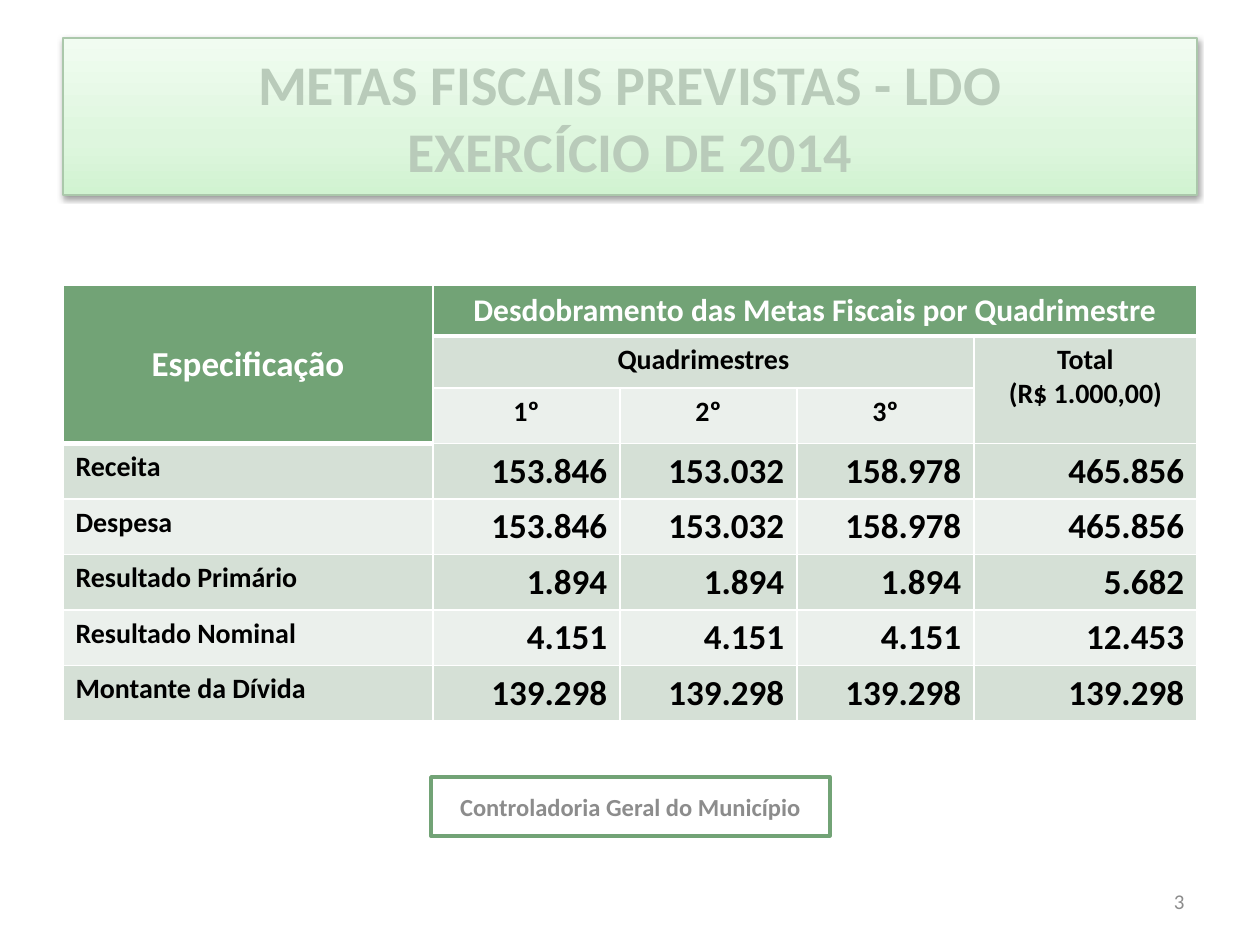
from lxml.etree import SubElement
from pptx import Presentation
from pptx.dml.color import RGBColor
from pptx.enum.shapes import MSO_SHAPE
from pptx.enum.text import MSO_ANCHOR, PP_ALIGN
from pptx.oxml import parse_xml
from pptx.oxml.ns import nsdecls, qn
from pptx.util import Pt

TITLE = ["METAS FISCAIS PREVISTAS - LDO", "EXERCÍCIO DE 2014"]
HEADINGS = [
    (0, 0, 2, 0, ["Especificação"], 20),
    (0, 1, 0, 4, ["Desdobramento das Metas Fiscais por Quadrimestre"], 18),
    (1, 1, 1, 3, ["Quadrimestres"], 16),
    (1, 4, 2, 4, ["Total", "(R$ 1.000,00)"], 16),
    (2, 1, 2, 1, ["1º"], 16),
    (2, 2, 2, 2, ["2º"], 16),
    (2, 3, 2, 3, ["3º"], 16),
]
GOALS = [
    ("Receita", "153.846", "153.032", "158.978", "465.856"),
    ("Despesa", "153.846", "153.032", "158.978", "465.856"),
    ("Resultado Primário", "1.894", "1.894", "1.894", "5.682"),
    ("Resultado Nominal", "4.151", "4.151", "4.151", "12.453"),
    ("Montante da Dívida", "139.298", "139.298", "139.298", "139.298"),
]
OFFICE = "Controladoria Geral do Município"
PAGE = "3"

FONT = "Calibri"
WHITE = RGBColor(0xFF, 0xFF, 0xFF)
BLACK = RGBColor(0, 0, 0)
GREEN = RGBColor(0x72, 0xA3, 0x76)
BAND_DARK = RGBColor(0xD5, 0xE0, 0xD6)
BAND_LIGHT = RGBColor(0xEB, 0xF0, 0xEC)
TITLE_INK = RGBColor(0xB9, 0xCB, 0xBA)
TITLE_EDGE = RGBColor(0xAB, 0xC8, 0xAB)
GRAY = RGBColor(0x8C, 0x8C, 0x8C)
TITLE_STOPS = [
    (0, RGBColor(0xD1, 0xF3, 0xD1)),
    (35, RGBColor(0xDE, 0xF6, 0xDE)),
    (100, RGBColor(0xF1, 0xFC, 0xF1)),
]

PX = 914400 // 126
LEFT, WIDTH = 63, 1134
COLUMNS = [370, 187, 177, 177, 223]
HEAD_ROWS = [50, 52, 55]
GOAL_ROW = 55


def px(*lengths):
    return [length * PX for length in lengths]


def write(paragraph, text, size, color, align, bold=True):
    paragraph.alignment = align
    run = paragraph.add_run()
    run.text = text
    run.font.name = FONT
    run.font.size = Pt(size)
    run.font.bold = bold
    run.font.color.rgb = color


def shade_title(title):
    stops = "".join(
        f'<a:gs pos="{at * 1000}"><a:srgbClr val="{color}"/></a:gs>'
        for at, color in TITLE_STOPS
    )
    properties = title._element.spPr
    properties.append(parse_xml(
        f'<a:gradFill {nsdecls("a")} rotWithShape="1"><a:gsLst>{stops}</a:gsLst>'
        '<a:lin ang="16200000" scaled="0"/></a:gradFill>'))
    title.line.color.rgb = TITLE_EDGE
    title.line.width = Pt(0.75)
    properties.append(parse_xml(
        f'<a:effectLst {nsdecls("a")}><a:outerShdw blurRad="{Pt(3.1)}" '
        f'dist="{Pt(1.6)}" dir="5400000" rotWithShape="0">'
        '<a:srgbClr val="000000"><a:alpha val="38000"/></a:srgbClr>'
        '</a:outerShdw></a:effectLst>'))


def style_cell(cell, row, column):
    head_end = 2 if column == 0 else 0
    thick = {"lnT": row == head_end + 1, "lnB": row <= head_end and
             row in (0, head_end)}
    for side in ("lnL", "lnR", "lnT", "lnB"):
        width = Pt(3 if thick.get(side) else 1)
        line = SubElement(cell._tc.get_or_add_tcPr(), qn(f"a:{side}"), w=str(width))
        SubElement(SubElement(line, qn("a:solidFill")), qn("a:srgbClr"),
                   val=str(WHITE))
    cell.fill.solid()
    if row <= head_end:
        cell.fill.fore_color.rgb = GREEN
    else:
        cell.fill.fore_color.rgb = BAND_DARK if row % 2 else BAND_LIGHT


def add_goals(slide):
    heights = HEAD_ROWS + [GOAL_ROW] * len(GOALS)
    table = slide.shapes.add_table(
        len(heights), len(COLUMNS), *px(LEFT, 285, WIDTH, sum(heights))).table
    for column, width in zip(table.columns, COLUMNS):
        column.width = width * PX
    for row, height in zip(table.rows, heights):
        row.height = height * PX
    for row in range(len(heights)):
        for column in range(len(COLUMNS)):
            style_cell(table.cell(row, column), row, column)

    for top, left, bottom, right, lines, size in HEADINGS:
        cell = table.cell(top, left)
        if (top, left) != (bottom, right):
            cell.merge(table.cell(bottom, right))
        if left == 0:
            cell.vertical_anchor = MSO_ANCHOR.MIDDLE
        frame = cell.text_frame
        for index, text in enumerate(lines):
            paragraph = frame.add_paragraph() if index else frame.paragraphs[0]
            write(paragraph, text, size, BLACK if top else WHITE, PP_ALIGN.CENTER)

    for row, goal in enumerate(GOALS, len(HEAD_ROWS)):
        for column, text in enumerate(goal):
            size, align = (20, PP_ALIGN.RIGHT) if column else (16, PP_ALIGN.LEFT)
            write(table.cell(row, column).text_frame.paragraphs[0],
                  text, size, BLACK, align)


def main():
    deck = Presentation()
    deck.slide_width, deck.slide_height = px(1260, 945)
    slide = deck.slides.add_slide(deck.slide_layouts[5])

    title = slide.shapes.title
    title.left, title.top, title.width, title.height = px(LEFT, 38, WIDTH, 157)
    shade_title(title)
    title.text_frame.vertical_anchor = MSO_ANCHOR.MIDDLE
    heading = title.text_frame.paragraphs[0]
    for index, text in enumerate(TITLE):
        if index:
            heading.add_line_break()
        write(heading, text, 32, TITLE_INK, PP_ALIGN.CENTER)

    add_goals(slide)

    office = slide.shapes.add_shape(MSO_SHAPE.RECTANGLE, *px(431, 777, 399, 59))
    office.shadow.inherit = False
    office.fill.solid()
    office.fill.fore_color.rgb = WHITE
    office.line.color.rgb = GREEN
    office.line.width = Pt(2)
    office.text_frame.vertical_anchor = MSO_ANCHOR.MIDDLE
    write(office.text_frame.paragraphs[0], OFFICE, 14, GRAY, PP_ALIGN.CENTER)

    page = slide.shapes.add_textbox(*px(903, 876, 294, 50)).text_frame
    page.word_wrap = True
    page.vertical_anchor = MSO_ANCHOR.MIDDLE
    write(page.paragraphs[0], PAGE, 12, GRAY, PP_ALIGN.RIGHT, bold=False)

    deck.save("out.pptx")


if __name__ == "__main__":
    main()
